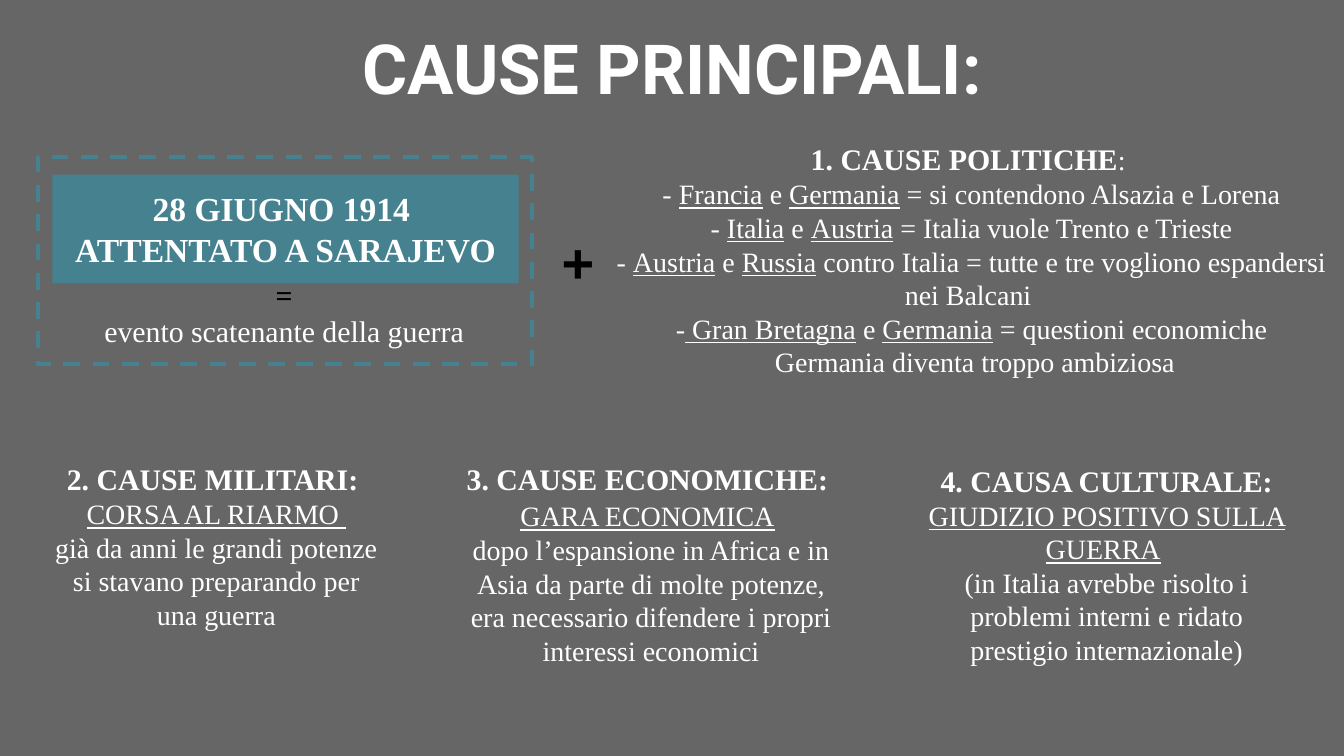
from pptx import Presentation
from pptx.dml.color import RGBColor
from pptx.enum.dml import MSO_LINE as Dash
from pptx.enum.shapes import MSO_SHAPE as Kind
from pptx.enum.text import MSO_ANCHOR as Anchor, MSO_AUTO_SIZE as Fit, PP_ALIGN as Align
from pptx.util import Inches, Pt

WHITE = RGBColor(0xFF, 0xFF, 0xFF)
BLACK = RGBColor(0, 0, 0)
GRAY = RGBColor(0x66, 0x66, 0x66)
TEAL = RGBColor(0x45, 0x81, 0x8E)
WIDE, HIGH = Inches(10), Inches(5.625)

# In the texts, *...* is a bold lead and _..._ is underlined.
TITLE = ["*CAUSE PRINCIPALI:*"]
EVENT = ["*28 GIUGNO 1914 *", "*ATTENTATO A SARAJEVO*"]
SPARK = ["*=*", "evento scatenante della guerra"]
CAUSES = [
    ((44.6, 16.89, 55.4, 35.38), [
        "*1. CAUSE POLITICHE*: ",
        "- _Francia_ e _Germania_ = si contendono Alsazia e Lorena",
        "- _Italia_ e _Austria_ = Italia vuole Trento e Trieste",
        "- _Austria_ e _Russia_ contro Italia = tutte e tre vogliono "
        "espandersi nei Balcani ",
        "-_ Gran Bretagna_ e _Germania_ = questioni economiche",
        " Germania diventa troppo ambiziosa"]),
    ((3, 59.2, 26.2, 26.31), [
        "*2. CAUSE MILITARI: *",
        "_CORSA AL RIARMO _",
        "già da anni le grandi potenze si stavano preparando per una guerra"]),
    ((33.5, 59.2, 29.9, 31.11), [
        "*3. CAUSE ECONOMICHE: *",
        "_GARA ECONOMICA_* *",
        "dopo l’espansione in Africa e in Asia da parte di molte potenze, "
        "era necessario difendere i propri interessi economici"]),
    ((67.7, 59.38, 29.3, 30.76), [
        "*4. CAUSA CULTURALE:*",
        "_GIUDIZIO POSITIVO SULLA GUERRA_ ",
        "(in Italia avrebbe risolto i problemi interni e ridato "
        "prestigio internazionale)"]),
]

deck = Presentation()
deck.slide_width, deck.slide_height = WIDE, HIGH
slide = deck.slides.add_slide(deck.slide_layouts[6])
slide.background.fill.solid()
slide.background.fill.fore_color.rgb = GRAY


def place(area):
    return [int(share * side / 100) for share, side in zip(area, (WIDE, HIGH) * 2)]


def rect(area):
    box = slide.shapes.add_shape(Kind.RECTANGLE, *place(area))
    box.shadow.inherit = False
    return box


def write(lines, area=None, box=None, lead=16, size=15, face="Times New Roman",
          tone=WHITE, align=Align.CENTER):
    box = box or slide.shapes.add_textbox(*place(area))
    frame = box.text_frame
    frame.word_wrap = True
    frame.auto_size = Fit.SHAPE_TO_FIT_TEXT
    frame.vertical_anchor = Anchor.TOP
    frame.margin_left = frame.margin_right = Inches(0.1)
    frame.margin_top = frame.margin_bottom = Inches(0.1)
    for n, line in enumerate(lines):
        para = frame.add_paragraph() if n else frame.paragraphs[0]
        para.alignment = align
        for i, part in enumerate(line.split("_")):
            for j, bit in enumerate(part.split("*")):
                if bit:
                    bold = j % 2 == 1
                    run = para.add_run()
                    run.text = bit
                    font = run.font
                    font.name, font.bold = face, bold
                    font.underline = i % 2 == 1
                    font.size = Pt(lead if bold else size)
                    font.color.rgb = tone if bold else WHITE


write(TITLE, (0, 1.6, 100, 14.58), lead=37, face="Roboto")

event = rect((3.9, 23.11, 34.7, 14.4))
event.fill.solid()
event.fill.fore_color.rgb = TEAL
event.line.fill.background()
write(EVENT, box=event, lead=18)

write(SPARK, (3.1, 34.84, 36.1, 13.16), size=16, tone=BLACK)
write(["*+*"], (40.8, 28.27, 4.9, 12.62), lead=30, face="Arial", tone=BLACK,
      align=Align.LEFT)

frame = rect((2.8, 20.8, 36.8, 27.38))
frame.fill.background()
frame.line.color.rgb = TEAL
frame.line.width = Pt(2.25)
frame.line.dash_style = Dash.DASH

for area, lines in CAUSES:
    write(lines, area)

deck.save("out.pptx")
